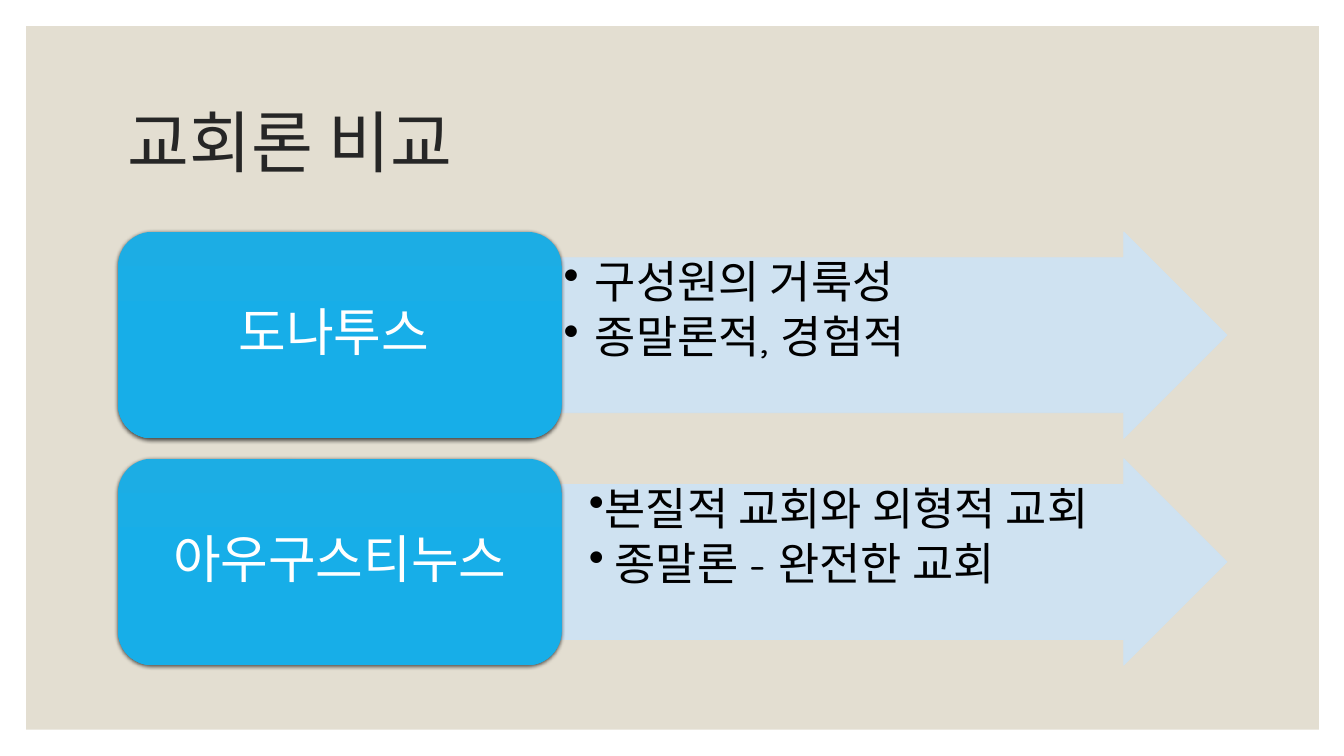
from lxml.etree import SubElement
from pptx import Presentation
from pptx.dml.color import RGBColor
from pptx.enum.shapes import MSO_SHAPE
from pptx.enum.text import MSO_ANCHOR, PP_ALIGN
from pptx.oxml.ns import qn
from pptx.util import Inches, Pt

COLORS = {
    "panel": "E3DED1",
    "title": "262626",
    "arrow": "CDE3F5",
    "label_top": "1CADE4",
    "label_bottom": "17AEE8",
    "label_text": "FFFFFF",
    "points": "000000",
    "shadow": "000000",
}
FONT = "Quicksand"
ROWS = [
    # label, points, left margin, first-line indent
    ("도나투스 ", ["구성원의 거룩성", "종말론적, 경험적"], 0.31, -0.31),
    ("아우구스티누스", ["본질적 교회와 외형적 교회", " 종말론 - 완전한 교회"], 0.25, 0),
]
ROW_TOP, ROW_STEP, ROW_HEIGHT = 2.3, 2.25, 2.05
LABEL_LEFT, LABEL_WIDTH, ARROW_WIDTH = 1.17, 4.4, 6.6


def write_paragraphs(frame, lines, size, color, inset=(0.1, 0.05), space_after=0):
    """Fill a text frame; space_after is a percentage of the line."""
    frame.word_wrap = True
    frame.margin_left = frame.margin_right = Inches(inset[0])
    frame.margin_top = frame.margin_bottom = Inches(inset[1])
    for index, line in enumerate(lines):
        para = frame.paragraphs[0] if index == 0 else frame.add_paragraph()
        para.text = line
        para.alignment = PP_ALIGN.LEFT
        para.line_spacing = 0.9
        para.font.name = FONT
        para.font.size = Pt(size)
        para.font.color.rgb = RGBColor.from_string(COLORS[color])
        properties = para._p.get_or_add_pPr()
        spacing = SubElement(properties, qn("a:spcAft"))
        SubElement(spacing, qn("a:spcPct"), val=str(space_after * 1000))


def add_plain_shape(kind, left, top, width, height, color):
    shape = slide.shapes.add_shape(
        kind, Inches(left), Inches(top), Inches(width), Inches(height))
    shape.shadow.inherit = False
    shape.fill.solid()
    shape.fill.fore_color.rgb = RGBColor.from_string(COLORS[color])
    shape.line.fill.background()
    return shape


deck = Presentation()
deck.slide_width = Inches(13.33)
deck.slide_height = Inches(7.5)
slide = deck.slides.add_slide(deck.slide_layouts[6])

add_plain_shape(MSO_SHAPE.RECTANGLE, 0.26, 0.26, 12.82, 6.98, "panel")

title = slide.shapes.add_textbox(Inches(1.17), Inches(0.7), Inches(11), Inches(1.5))
title.text_frame.vertical_anchor = MSO_ANCHOR.MIDDLE
write_paragraphs(title.text_frame, ["교회론 비교"], 48, "title")

for row, (name, points, margin, indent) in enumerate(ROWS):
    top = ROW_TOP + row * ROW_STEP

    arrow = add_plain_shape(MSO_SHAPE.RIGHT_ARROW, LABEL_LEFT + LABEL_WIDTH, top,
                            ARROW_WIDTH, ROW_HEIGHT, "arrow")
    arrow.adjustments[0] = 0.75
    arrow.adjustments[1] = 0.5
    arrow.line.color.rgb = RGBColor.from_string(COLORS["arrow"])
    arrow.line.width = Pt(0.5)
    for tint in arrow._element.spPr.iter(qn("a:srgbClr")):
        SubElement(tint, qn("a:alpha"), val="90000")
    arrow.text_frame.vertical_anchor = MSO_ANCHOR.TOP
    write_paragraphs(arrow.text_frame, points, 32, "points", (0.02, 0.02), 15)
    for para in arrow.text_frame.paragraphs:
        properties = para._p.get_or_add_pPr()
        properties.set("lvl", "1")
        properties.set("marL", str(Inches(margin)))
        properties.set("indent", str(Inches(indent)))
        SubElement(properties, qn("a:buChar"), char="•")
        # Bullets come before the default run properties in the schema
        defaults = properties.find(qn("a:defRPr"))
        if defaults is not None:
            properties.append(defaults)

    label = add_plain_shape(MSO_SHAPE.ROUNDED_RECTANGLE, LABEL_LEFT, top,
                            LABEL_WIDTH, ROW_HEIGHT, "label_top")
    label.fill.gradient()
    label.fill.gradient_angle = 270
    first_stop, last_stop = label.fill.gradient_stops
    first_stop.color.rgb = RGBColor.from_string(COLORS["label_top"])
    last_stop.color.rgb = RGBColor.from_string(COLORS["label_bottom"])
    last_stop.position = 0.5
    effects = label._element.spPr.find(qn("a:effectLst"))
    shadow = SubElement(effects, qn("a:outerShdw"), blurRad=str(Pt(3)),
                        dist=str(Pt(1)), dir="5400000", rotWithShape="0")
    shade = SubElement(shadow, qn("a:srgbClr"), val=COLORS["shadow"])
    SubElement(shade, qn("a:alpha"), val="63000")
    label.text_frame.vertical_anchor = MSO_ANCHOR.MIDDLE
    write_paragraphs(label.text_frame, [name], 37, "label_text", (0.15, 0.08), 35)
    label.text_frame.paragraphs[0].alignment = PP_ALIGN.CENTER

# Paragraph spacing must also precede the default run properties
for defaults in list(slide.shapes._spTree.iter(qn("a:defRPr"))):
    defaults.getparent().append(defaults)

deck.save("out.pptx")
